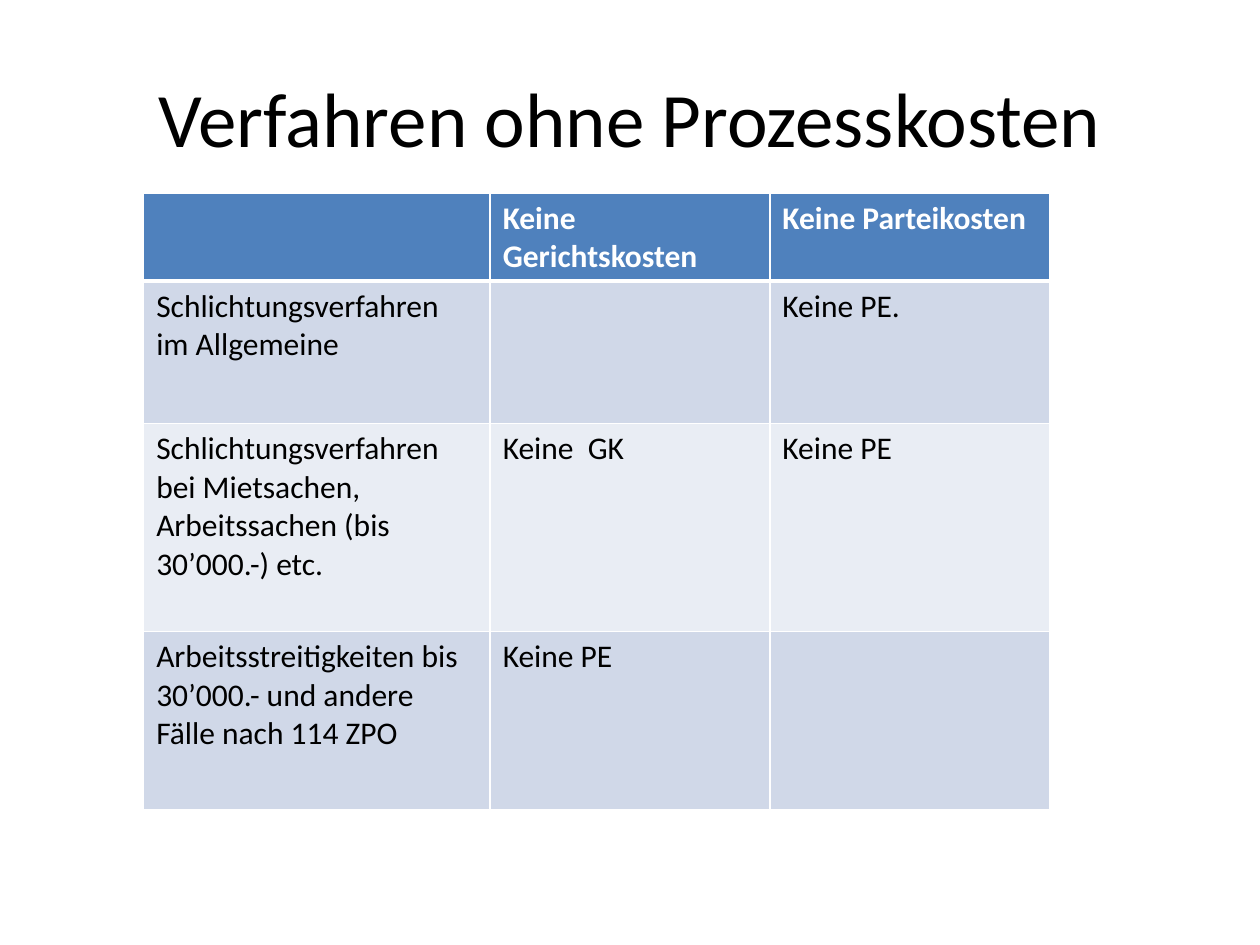
from dataclasses import dataclass

from lxml import etree
from pptx import Presentation
from pptx.dml.color import RGBColor
from pptx.enum.text import MSO_ANCHOR, PP_ALIGN
from pptx.oxml.ns import qn
from pptx.util import Inches, Pt

CENTER = PP_ALIGN.CENTER
LEFT = PP_ALIGN.LEFT
MIDDLE = MSO_ANCHOR.MIDDLE
BLANK_LAYOUT = 6


@dataclass(frozen=True)
class Theme:
    font: str = "Calibri"
    title_size: int = 44
    table_size: int = 18
    text: str = "000000"
    white: str = "FFFFFF"
    header: str = "4F81BD"
    bands: tuple = ("D0D8E8", "E9EDF4")
    border_width: int = 1
    header_border_width: int = 3


THEME = Theme()
TITLE = "Verfahren ohne Prozesskosten"
COLUMN_WIDTHS = (2.75, 2.22, 2.22)
ROW_HEIGHTS = (0.7, 1.13, 1.65, 1.42)
ROWS = (
    ("", "Keine Gerichtskosten", "Keine Parteikosten"),
    ("Schlichtungsverfahren \nim Allgemeine", "", "Keine PE."),
    (
        "Schlichtungsverfahren bei Mietsachen, Arbeitssachen (bis 30’000.-) etc.",
        "Keine  GK",
        "Keine PE",
    ),
    (
        "Arbeitsstreitigkeiten bis \n30’000.- und andere \nFälle nach 114 ZPO",
        "Keine PE",
        "",
    ),
)


def write_text(text_frame, text, size, color=THEME.text, bold=False, align=LEFT):
    text_frame.word_wrap = True
    paragraph = text_frame.paragraphs[0]
    paragraph.text = text.replace("\n", "\v")
    paragraph.alignment = align
    for run in paragraph.runs:
        run.font.name = THEME.font
        run.font.size = Pt(size)
        run.font.bold = bold
        run.font.color.rgb = RGBColor.from_string(color)


def add_title(slide):
    shape = slide.shapes.add_textbox(Inches(0.5), Inches(0.3), Inches(9), Inches(1.25))
    shape.text_frame.vertical_anchor = MIDDLE
    write_text(shape.text_frame, TITLE, THEME.title_size, align=CENTER)


def set_border(cell, side, width):
    line = etree.Element(qn(f"a:ln{side}"), w=str(Pt(width)))
    fill = etree.SubElement(line, qn("a:solidFill"))
    etree.SubElement(fill, qn("a:srgbClr"), val=THEME.white)
    return line


def set_borders(cell, top, bottom):
    widths = {"L": THEME.border_width, "R": THEME.border_width, "T": top, "B": bottom}
    properties = cell._tc.get_or_add_tcPr()
    for position, (side, width) in enumerate(widths.items()):
        properties.insert(position, set_border(cell, side, width))


def format_cell(cell, text, row_index):
    is_header = row_index == 0
    fill = THEME.header if is_header else THEME.bands[(row_index - 1) % 2]
    cell.fill.solid()
    cell.fill.fore_color.rgb = RGBColor.from_string(fill)
    thin, thick = THEME.border_width, THEME.header_border_width
    set_borders(
        cell,
        top=thick if row_index == 1 else thin,
        bottom=thick if is_header else thin,
    )
    color = THEME.white if is_header else THEME.text
    write_text(cell.text_frame, text, THEME.table_size, color=color, bold=is_header)


def add_cost_table(slide):
    table = slide.shapes.add_table(
        len(ROWS),
        len(COLUMN_WIDTHS),
        Inches(1.14),
        Inches(1.53),
        Inches(sum(COLUMN_WIDTHS)),
        Inches(sum(ROW_HEIGHTS)),
    ).table
    for column, width in zip(table.columns, COLUMN_WIDTHS):
        column.width = Inches(width)
    for row_index, (row, height) in enumerate(zip(table.rows, ROW_HEIGHTS)):
        row.height = Inches(height)
        for cell, text in zip(row.cells, ROWS[row_index]):
            format_cell(cell, text, row_index)


def main():
    presentation = Presentation()
    presentation.slide_width = Inches(10)
    presentation.slide_height = Inches(7.5)
    slide = presentation.slides.add_slide(presentation.slide_layouts[BLANK_LAYOUT])
    add_title(slide)
    add_cost_table(slide)
    presentation.save("out.pptx")


if __name__ == "__main__":
    main()
